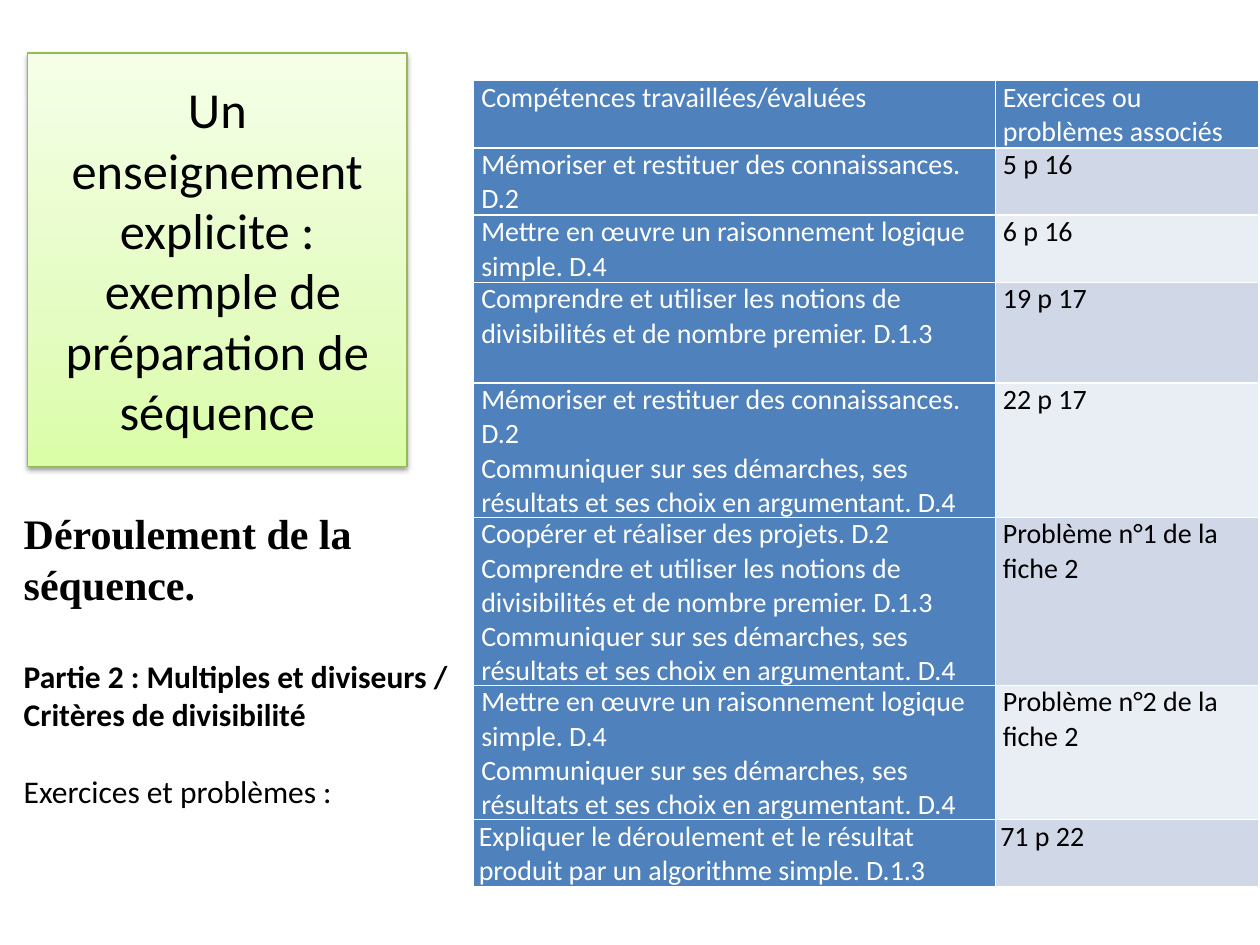
from dataclasses import dataclass
from copy import deepcopy

from lxml.etree import SubElement
from pptx import Presentation
from pptx.dml.color import RGBColor
from pptx.enum.text import MSO_ANCHOR, MSO_AUTO_SIZE, PP_ALIGN
from pptx.oxml.ns import qn
from pptx.util import Inches, Pt


@dataclass(frozen=True)
class Theme:
    """Colours, fonts and type sizes of the slide."""
    black: str = "000000"
    white: str = "FFFFFF"
    blue: str = "4F81BD"
    bands: tuple = ("D0D8E8", "E9EDF4")
    green_line: str = "98B955"
    green_stops: tuple = ((0, "DAFDA7"), (0.35, "E4FCC2"), (1, "F5FFE7"))
    body_font: str = "Calibri"
    heading_font: str = "Times New Roman"
    title_size: float = 28.8
    heading_size: int = 24
    text_size: int = 18
    table_size: int = 16


THEME = Theme()
LOGIC = "Mettre en œuvre un raisonnement logique simple. D.4"
MEMORY = "Mémoriser et restituer des connaissances. D.2"
NOTIONS = "Comprendre et utiliser les notions de divisibilités et de nombre premier. D.1.3"
COMMUNICATE = "Communiquer sur ses démarches, ses résultats et ses choix en argumentant. D.4"
COOPERATE = "Coopérer et réaliser des projets. D.2"
ALGORITHM = "Expliquer le déroulement et le résultat produit par un algorithme simple. D.1.3"
ROWS = [
    (2, ["Compétences travaillées/évaluées"], "Exercices ou problèmes associés"),
    (2, [MEMORY], "5 p 16"),
    (2, [LOGIC], "6 p 16"),
    (3, [NOTIONS], "19 p 17"),
    (4, [MEMORY, COMMUNICATE], "22 p 17"),
    (5, [COOPERATE, NOTIONS, COMMUNICATE], "Problème n°1 de la fiche 2"),
    (4, [LOGIC, COMMUNICATE], "Problème n°2 de la fiche 2"),
    (2, [ALGORITHM], "71 p 22"),
]


def rgb(value):
    """Turn a hex string into a colour."""
    return RGBColor.from_string(value)


def add_run(p, text, size, color=THEME.black, font=THEME.body_font, bold=False):
    """Add one formatted run to a paragraph."""
    r = p.add_run()
    r.text = text
    r.font.name, r.font.size, r.font.bold = font, Pt(size), bold
    r.font.color.rgb = rgb(color)


def next_paragraph(tf, index):
    """Return the first paragraph of a frame, or a new one after it."""
    return tf.paragraphs[0] if index == 0 else tf.add_paragraph()


def fill_gradient(sp, stops, angle):
    """Fill a shape with a linear gradient of three stops."""
    sp.fill.gradient()
    sp.fill.gradient_angle = angle
    first = sp._element.spPr.find(".//" + qn("a:gs"))
    first.addnext(deepcopy(first))
    for stop, (position, color) in zip(sp.fill.gradient_stops, stops):
        stop.position = position
        stop.color.rgb = rgb(color)


def add_shadow(sp):
    """Give a shape a soft shadow straight below it."""
    sp.shadow.inherit = False
    effects = sp._element.spPr.find(qn("a:effectLst"))
    shadow = SubElement(effects, qn("a:outerShdw"), blurRad=str(Pt(3.1)),
                        dist=str(Pt(1.6)), dir="5400000", rotWithShape="0")
    color = SubElement(shadow, qn("a:srgbClr"), val=THEME.black)
    SubElement(color, qn("a:alpha"), val="38000")


def format_title(sp):
    """Place and write the title in its green panel."""
    sp.left, sp.top = Inches(0.22), Inches(0.42)
    sp.width, sp.height = Inches(3.01), Inches(3.28)
    fill_gradient(sp, THEME.green_stops, 90)
    sp.line.color.rgb = rgb(THEME.green_line)
    sp.line.width = Pt(0.75)
    add_shadow(sp)
    tf = sp.text_frame
    tf.word_wrap, tf.auto_size = True, MSO_AUTO_SIZE.NONE
    tf.vertical_anchor = MSO_ANCHOR.MIDDLE
    p = tf.paragraphs[0]
    p.alignment = PP_ALIGN.CENTER
    add_run(p, "Un enseignement explicite :", THEME.title_size)
    p.add_line_break()
    add_run(p, " exemple de préparation de séquence", THEME.title_size)


def add_outline(s):
    """Add the sequence heading and its two following lines."""
    sp = s.shapes.add_textbox(Inches(0.09), Inches(3.98), Inches(3.67), Inches(2.52))
    tf = sp.text_frame
    tf.word_wrap = True
    lines = [
        ("Déroulement de la séquence.", THEME.heading_size, THEME.heading_font, True, 0),
        ("Partie 2 : Multiples et diviseurs / Critères de divisibilité",
         THEME.text_size, THEME.body_font, True, 28),
        ("Exercices et problèmes :", THEME.text_size, THEME.body_font, False, 22),
    ]
    for i, (text, size, font, bold, gap) in enumerate(lines):
        p = next_paragraph(tf, i)
        p.space_before = Pt(gap)
        add_run(p, text, size, font=font, bold=bold)


def fill_cell(cell, texts, fill, color, inset):
    """Write the paragraphs of a cell and colour it."""
    cell.margin_left = cell.margin_right = Inches(inset)
    cell.margin_top = cell.margin_bottom = 0
    cell.fill.solid()
    cell.fill.fore_color.rgb = rgb(fill)
    for i, text in enumerate(texts):
        add_run(next_paragraph(cell.text_frame, i), text, THEME.table_size, color)


def add_skills_table(s):
    """Add the table of skills and exercises, its rows sized by line count."""
    height = Inches(6.39)
    line_height = height // sum(lines for lines, _, _ in ROWS)
    table = s.shapes.add_table(len(ROWS), 2, Inches(3.76), Inches(0.64),
                               Inches(6.23), height).table
    table.first_col = True
    table.columns[0].width, table.columns[1].width = Inches(4.14), Inches(2.09)
    for i, (lines, skills, exercise) in enumerate(ROWS):
        table.rows[i].height = line_height * lines
        inset = 0.04 if i == len(ROWS) - 1 else 0.06
        fill, color = (THEME.bands[(i - 1) % 2], THEME.black) if i else (THEME.blue, THEME.white)
        fill_cell(table.cell(i, 0), skills, THEME.blue, THEME.white, inset)
        fill_cell(table.cell(i, 1), [exercise], fill, color, inset)


def main():
    """Build and save the slide."""
    prs = Presentation()
    prs.slide_width, prs.slide_height = Inches(10), Inches(7.5)
    s = prs.slides.add_slide(prs.slide_layouts[5])
    add_outline(s)
    add_skills_table(s)
    format_title(s.shapes.title)
    prs.save("out.pptx")


if __name__ == "__main__":
    main()
